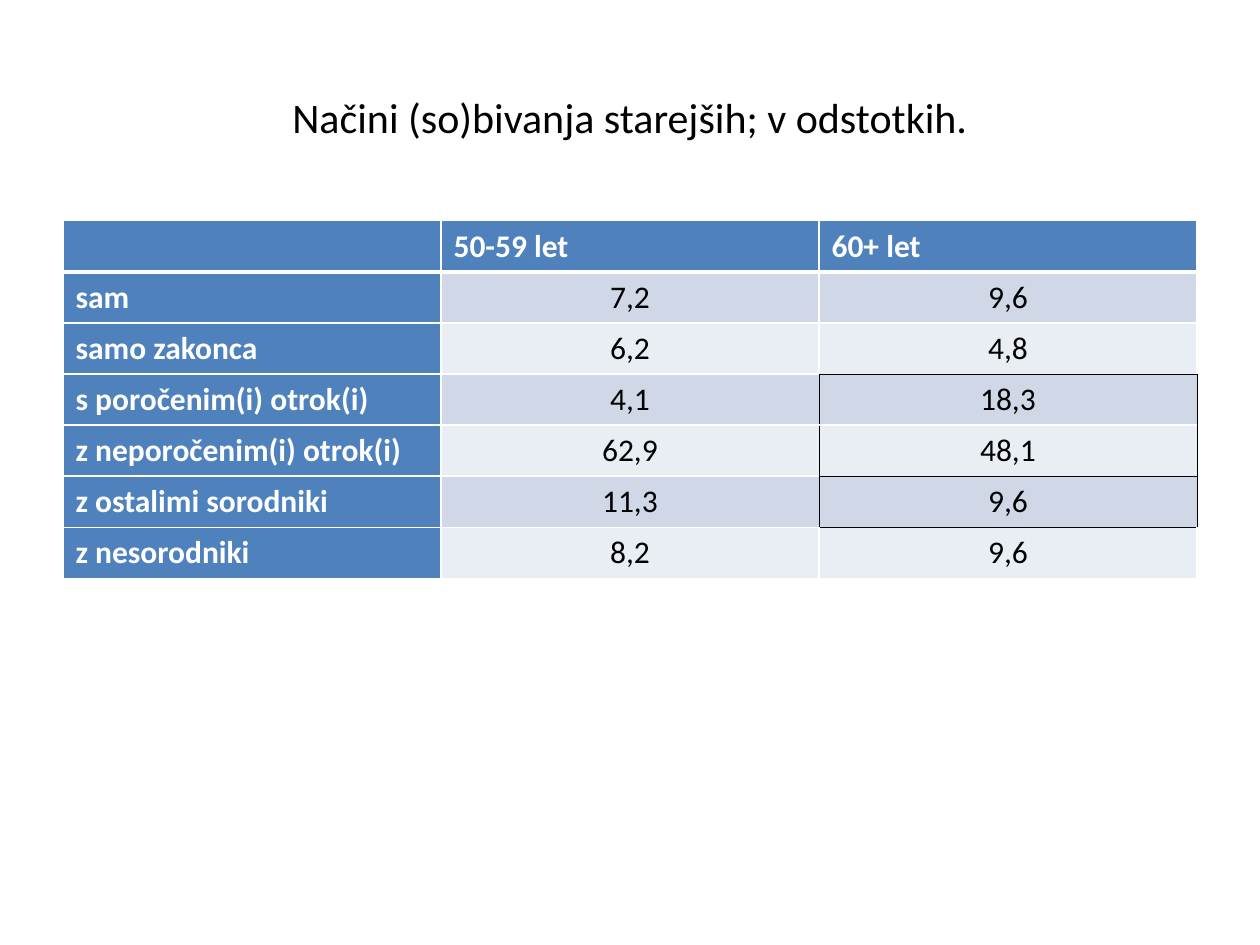
import pptx
import pptx.util
import pptx.dml.color
import pptx.enum.text
import pptx.oxml
import pptx.oxml.ns

Cm, Pt = pptx.util.Cm, pptx.util.Pt
ALIGN = pptx.enum.text.PP_ALIGN
BLUE, WHITE, BLACK = "4F81BD", "FFFFFF", "000000"
BANDS = ("E9EDF4", "D0D8E8")
ROWS = [
    ("", "50-59 let", "60+ let"),
    ("sam", "7,2", "9,6"),
    ("samo zakonca", "6,2", "4,8"),
    ("s poročenim(i) otrok(i)", "4,1", "18,3"),
    ("z neporočenim(i) otrok(i)", "62,9", "48,1"),
    ("z ostalimi sorodniki", "11,3", "9,6"),
    ("z nesorodniki", "8,2", "9,6"),
]
BOXED = (3, 4, 5)
RULED = (3, 5, 6)


def color(code):
    """Turn a hex string into a colour."""
    return pptx.dml.color.RGBColor.from_string(code)


def style(para, size, code, bold, align):
    """Format a whole paragraph."""
    para.alignment = align
    font = para.font
    font.name, font.size, font.bold = "Calibri", Pt(size), bold
    font.color.rgb = color(code)


def border(cell, side, width, code):
    """Draw one border of a cell."""
    space = pptx.oxml.ns.nsdecls("a")
    line = pptx.oxml.parse_xml(
        f'<a:ln{side} {space} w="{Pt(width)}"><a:solidFill>'
        f'<a:srgbClr val="{code}"/></a:solidFill></a:ln{side}>'
    )
    cell._tc.get_or_add_tcPr().append(line)


def frame(cell, row, col):
    """Draw the grid, with a thin black frame in the last column."""
    for side, edge in (("L", col), ("R", col + 1)):
        dark = row in BOXED and edge >= 2
        border(cell, side, *((0.5, BLACK) if dark else (1, WHITE)))
    for side, edge in (("T", row), ("B", row + 1)):
        if col == 2 and edge in RULED:
            border(cell, side, 0.5, BLACK)
        else:
            border(cell, side, 3 if edge == 1 else 1, WHITE)


def fill(cell, text, row, col):
    """Write and colour one cell."""
    head = row == 0 or col == 0
    frame(cell, row, col)
    cell.fill.solid()
    cell.fill.fore_color.rgb = color(BLUE if head else BANDS[row % 2])
    cell.text = text
    style(cell.text_frame.paragraphs[0], 18, WHITE if head else BLACK,
          head, ALIGN.LEFT if head else ALIGN.CENTER)


def title(slide, text):
    """Place the slide title."""
    shape = slide.shapes.title
    shape.left, shape.top = Cm(1.27), Cm(0.76)
    shape.width, shape.height = Cm(22.86), Cm(3.18)
    shape.text_frame.text = text
    shape.text_frame.vertical_anchor = pptx.enum.text.MSO_ANCHOR.MIDDLE
    style(shape.text_frame.paragraphs[0], 24, BLACK, False, ALIGN.CENTER)


def grid(slide, rows):
    """Add the table of shares."""
    table = slide.shapes.add_table(
        len(rows), len(rows[0]), Cm(1.27), Cm(4.45),
        Cm(22.86), Cm(1.03) * len(rows)
    ).table
    for row, texts in enumerate(rows):
        for col, text in enumerate(texts):
            fill(table.cell(row, col), text, row, col)


def main():
    """Build and save the slide."""
    deck = pptx.Presentation()
    deck.slide_width, deck.slide_height = Cm(25.4), Cm(19.05)
    slide = deck.slides.add_slide(deck.slide_layouts[5])
    title(slide, "Načini (so)bivanja starejših; v odstotkih.")
    grid(slide, ROWS)
    deck.save("out.pptx")


if __name__ == "__main__":
    main()
